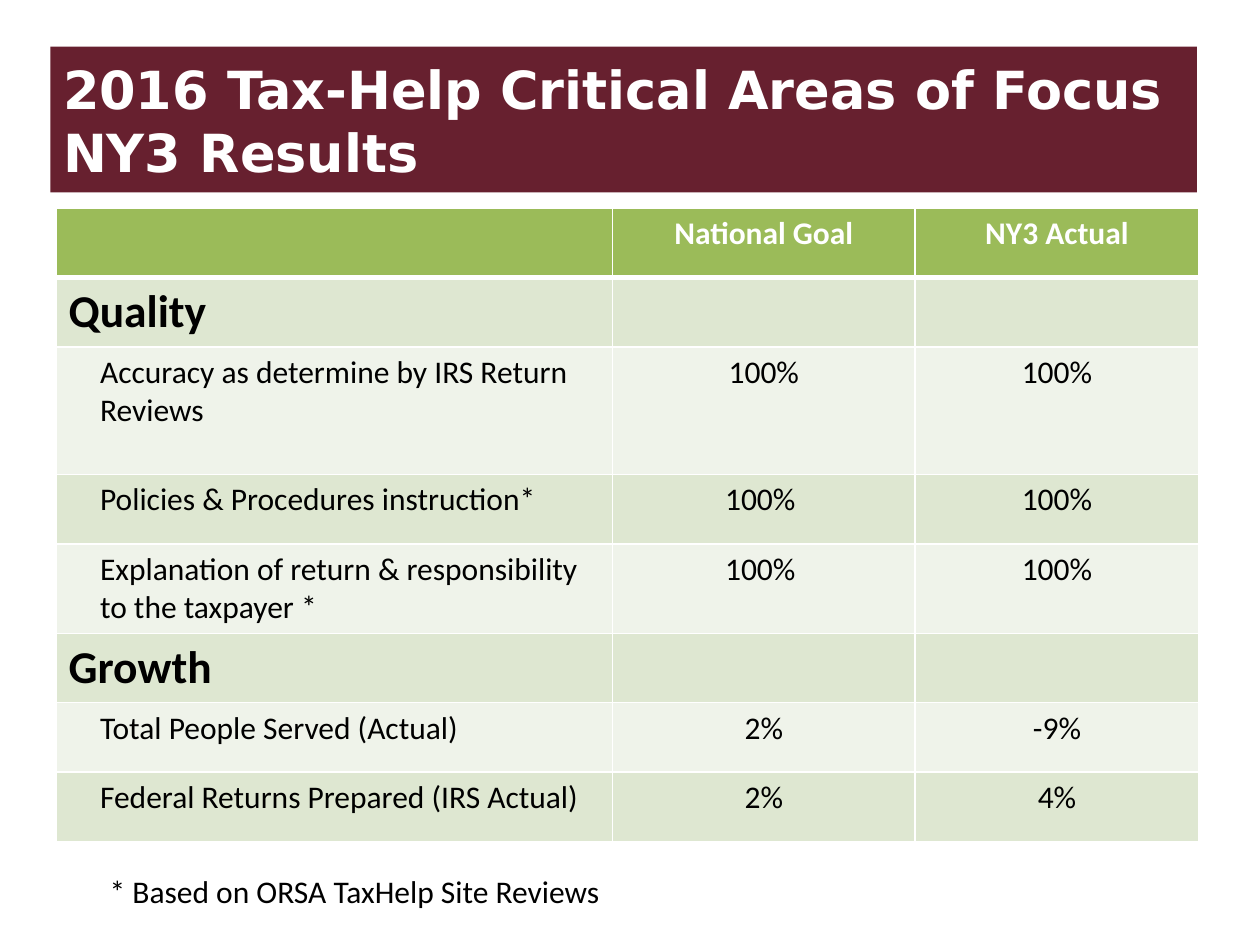
from lxml import etree
from pptx import Presentation
from pptx.dml.color import RGBColor
from pptx.enum.text import MSO_ANCHOR, MSO_AUTO_SIZE, PP_ALIGN
from pptx.oxml.ns import qn
from pptx.util import Pt

LEFT, CENTER = PP_ALIGN.LEFT, PP_ALIGN.CENTER
MIDDLE = MSO_ANCHOR.MIDDLE
NO_FIT = MSO_AUTO_SIZE.NONE

# Content: a row without values is a section heading
TITLE = "2016 Tax-Help Critical Areas of Focus \vNY3 Results"
HEADER = ("", "National Goal", "NY3 Actual")
ROWS = [
    ("Quality", "", ""),
    ("Accuracy as determine by IRS Return Reviews", "100%", "100%"),
    ("Policies & Procedures instruction*", "100% ", "100%"),
    ("Explanation of return & responsibility to the taxpayer *", "100% ", "100%"),
    ("Growth", "", ""),
    ("Total People Served (Actual)", "2%", "-9%"),
    ("Federal Returns Prepared (IRS Actual)", "2%", "4%"),
]
FOOTNOTE = "* Based on ORSA TaxHelp Site Reviews"

THEME = {
    "title_font": "DejaVu Sans", "body_font": "Calibri",
    "title_size": 30, "section_size": 26, "body_size": 18,
    "white": "FFFFFF", "black": "000000", "banner": "67202F",
    "header": "9BBB59", "bands": ("DEE7D1", "EFF3EA"),
}

# Layout in points
TITLE_BOX = (28.8, 26.7, 655.2, 83.3)
TABLE_AT = (32, 119)
COL_WIDTHS = (318, 173, 162)
ROW_HEIGHT = 39.6
TALL_ROWS = {2: 73, 4: 51}
FOOTNOTE_BOX = (55.6, 494.6, 302.4, 29)
INDENT = 18


def color(name):
    return RGBColor.from_string(THEME.get(name, name))


def style(p, size, ink, bold=False, align=LEFT, font="body_font"):
    p.alignment = align
    for r in p.runs:
        r.font.name = THEME[font]
        r.font.size = Pt(THEME[size])
        r.font.bold = bold
        r.font.color.rgb = color(ink)


def set_borders(cell, bottom):
    tcPr = cell._tc.get_or_add_tcPr()
    widths = (("lnL", 1), ("lnR", 1), ("lnT", 1), ("lnB", bottom))
    for i, (tag, width) in enumerate(widths):
        ln = etree.Element(qn(f"a:{tag}"), w=str(Pt(width)))
        fill = etree.SubElement(ln, qn("a:solidFill"))
        etree.SubElement(fill, qn("a:srgbClr"), val=THEME["white"])
        tcPr.insert(i, ln)


prs = Presentation()
prs.slide_width, prs.slide_height = Pt(720), Pt(540)
s = prs.slides.add_slide(prs.slide_layouts[5])

# Title banner
sp = s.shapes.title
sp.left, sp.top, sp.width, sp.height = map(Pt, TITLE_BOX)
sp.fill.solid()
sp.fill.fore_color.rgb = color("banner")
tf = sp.text_frame
tf.text = TITLE
tf.word_wrap, tf.auto_size, tf.vertical_anchor = True, NO_FIT, MIDDLE
style(tf.paragraphs[0], "title_size", "white", True, font="title_font")

# Results table
grid = [HEADER] + ROWS
heights = [TALL_ROWS.get(i, ROW_HEIGHT) for i in range(len(grid))]
table = s.shapes.add_table(len(grid), len(HEADER), *map(Pt, TABLE_AT),
                           Pt(sum(COL_WIDTHS)), Pt(sum(heights))).table
for col, width in zip(table.columns, COL_WIDTHS):
    col.width = Pt(width)
for i, (row, height) in enumerate(zip(grid, heights)):
    table.rows[i].height = Pt(height)
    is_header = i == 0
    is_section = not is_header and not row[1]
    for j, text in enumerate(row):
        cell = table.cell(i, j)
        cell.fill.solid()
        cell.fill.fore_color.rgb = color("header" if is_header else THEME["bands"][(i - 1) % 2])
        set_borders(cell, 3 if is_header else 1)
        p = cell.text_frame.paragraphs[0]
        if text:
            p.text = text
        style(p, "section_size" if is_section else "body_size",
              "white" if is_header else "black",
              is_header or is_section, CENTER if j else LEFT)
        if j == 0 and not (is_header or is_section):
            p._p.get_or_add_pPr().set("marL", str(Pt(INDENT)))

# Footnote
tf = s.shapes.add_textbox(*map(Pt, FOOTNOTE_BOX)).text_frame
tf.word_wrap = True
tf.text = FOOTNOTE
style(tf.paragraphs[0], "body_size", "black")

prs.save("out.pptx")
